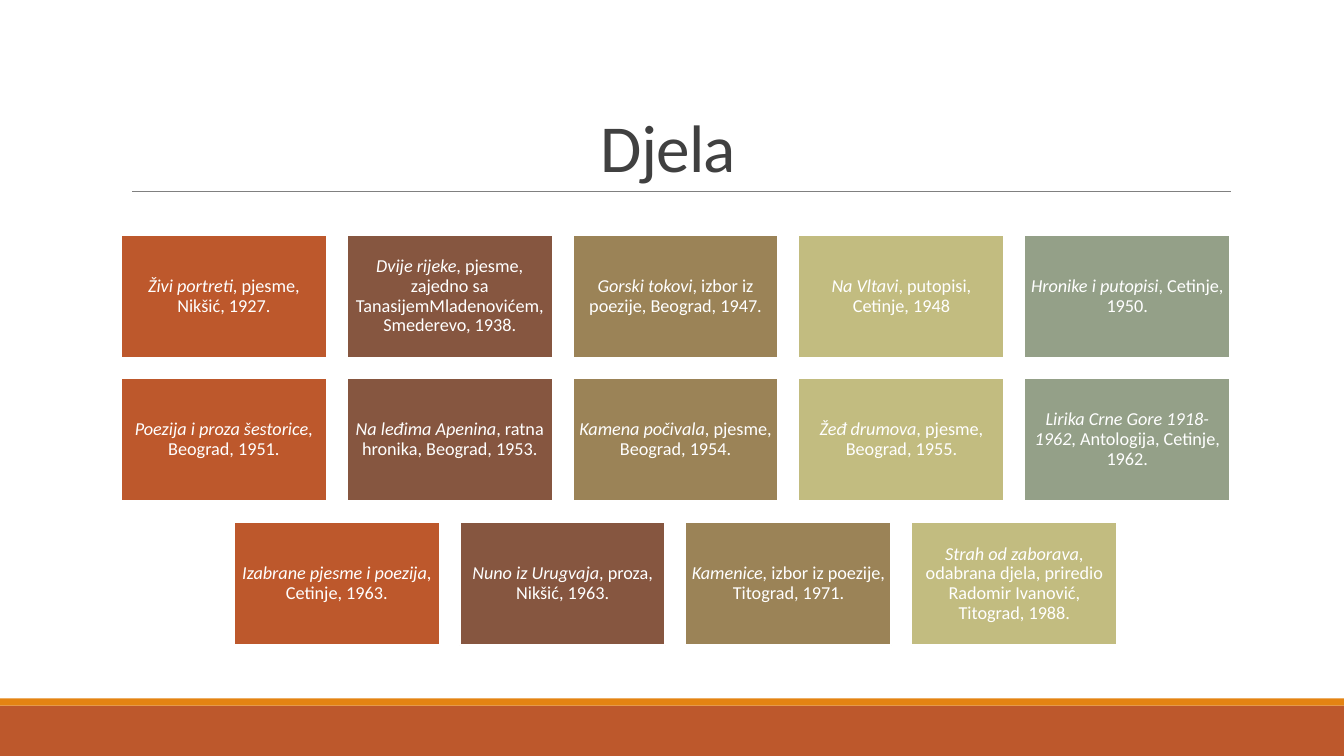
from lxml import etree
from pptx import Presentation
from pptx.dml.color import RGBColor
from pptx.enum.shapes import MSO_CONNECTOR, MSO_SHAPE
from pptx.enum.text import MSO_ANCHOR, PP_ALIGN
from pptx.oxml.ns import qn
from pptx.util import Inches, Pt

COLORS = {
    "rust": "BD582C", "brown": "865640", "tan": "9B8357", "olive": "C2BC80",
    "sage": "94A088", "orange": "E48312", "rule": "808080", "title": "404040",
    "white": "FFFFFF",
}
CARD_FILLS = ["rust", "brown", "tan", "olive", "sage"]
CARD_W, CARD_H, STEP_X = 2.04, 1.22, 2.24

WORKS = [
    (1.2, 2.33, [
        ("Živi portreti", ", pjesme, Nikšić, 1927."),
        ("Dvije rijeke", ", pjesme, zajedno sa TanasijemMladenovićem, Smederevo, 1938."),
        ("Gorski tokovi", ", izbor iz poezije, Beograd, 1947."),
        ("Na Vltavi", ", putopisi, Cetinje, 1948"),
        ("Hronike i putopisi", ", Cetinje, 1950."),
    ]),
    (1.2, 3.75, [
        ("Poezija i proza šestorice", ", Beograd, 1951."),
        ("Na leđima Apenina", ", ratna hronika, Beograd, 1953."),
        ("Kamena počivala", ", pjesme, Beograd, 1954."),
        ("Žeđ drumova", ", pjesme, Beograd, 1955."),
        ("Lirika Crne Gore 1918-1962", ", Antologija, Cetinje, 1962."),
    ]),
    (2.32, 5.18, [
        ("Izabrane pjesme i poezija", ", Cetinje, 1963."),
        ("Nuno iz Urugvaja", ", proza, Nikšić, 1963."),
        ("Kamenice,", " izbor iz poezije, Titograd, 1971."),
        ("Strah od zaborava", ", odabrana djela, priredio Radomir Ivanović, Titograd, 1988."),
    ]),
]

prs = Presentation()
prs.slide_width = Inches(13.33)
prs.slide_height = Inches(7.5)
slide = prs.slides.add_slide(prs.slide_layouts[6])


def add_rect(left, top, width, height, fill):
    sp = slide.shapes.add_shape(
        MSO_SHAPE.RECTANGLE, Inches(left), Inches(top), Inches(width), Inches(height))
    sp.shadow.inherit = False
    sp.fill.solid()
    sp.fill.fore_color.rgb = RGBColor.from_string(COLORS[fill])
    sp.line.fill.background()
    return sp


def style_run(r, size, color, italic=False):
    r.font.name = "Calibri"
    r.font.size = Pt(size)
    r.font.italic = italic
    r.font.color.rgb = RGBColor.from_string(COLORS[color])


add_rect(0, 7, 13.33, 0.5, "rust")
add_rect(0, 6.93, 13.33, 0.07, "orange")

rule = slide.shapes.add_connector(
    MSO_CONNECTOR.STRAIGHT, Inches(1.31), Inches(1.9), Inches(12.21), Inches(1.9))
rule.line.color.rgb = RGBColor.from_string(COLORS["rule"])
rule.line.width = Pt(0.5)
etree.SubElement(rule._element.spPr, qn("a:effectLst"))

title = slide.shapes.add_textbox(Inches(1.2), Inches(0.31), Inches(11), Inches(1.59))
tf = title.text_frame
tf.word_wrap = True
tf.vertical_anchor = MSO_ANCHOR.BOTTOM
p = tf.paragraphs[0]
p.text = "Djela "
p.alignment = PP_ALIGN.CENTER
p.line_spacing = 0.85
style_run(p.runs[0], 48, "title")
p.runs[0].font._element.set("spc", "-50")

for left, top, works in WORKS:
    for col, (name, details) in enumerate(works):
        card = add_rect(left + col * STEP_X, top, CARD_W, CARD_H, CARD_FILLS[col])
        card.line.color.rgb = RGBColor.from_string(COLORS["white"])
        card.line.width = Pt(1.25)
        tf = card.text_frame
        tf.word_wrap = True
        tf.vertical_anchor = MSO_ANCHOR.MIDDLE
        tf.margin_left = tf.margin_right = Inches(0.05)
        tf.margin_top = tf.margin_bottom = Inches(0.05)
        p = tf.paragraphs[0]
        p.text = name
        p.alignment = PP_ALIGN.CENTER
        p.line_spacing = 0.9
        style_run(p.runs[0], 13, "white", italic=True)
        r = p.add_run()
        r.text = details
        style_run(r, 13, "white")

prs.save("out.pptx")
